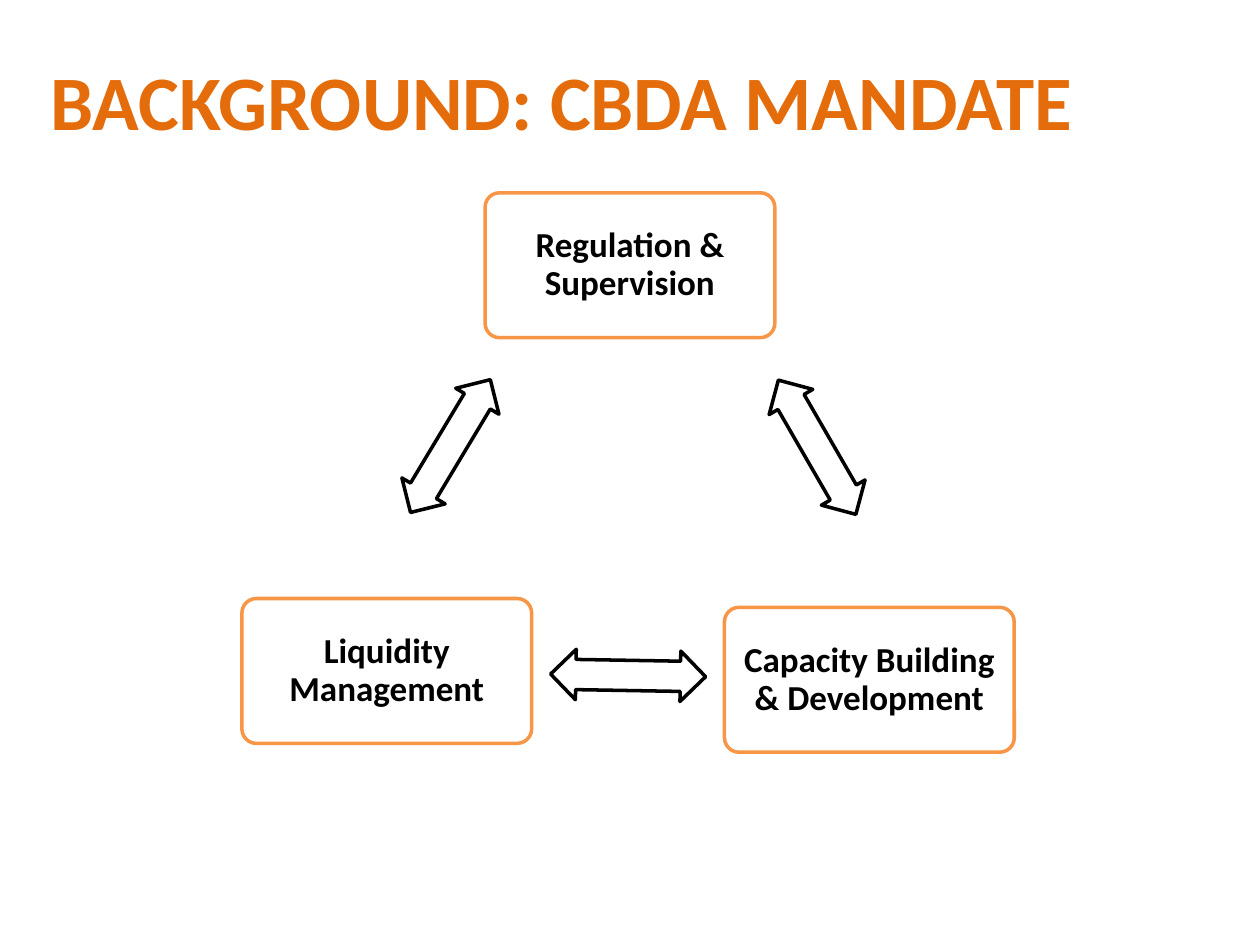
from dataclasses import dataclass

from pptx import Presentation
from pptx import util as u
from pptx.dml.color import RGBColor
from pptx.enum import shapes, text


@dataclass(frozen=True)
class Theme:
    font: str = "Calibri"
    title_size: int = 44
    label_size: int = 20
    line_width: int = 2
    title: str = "E46C0A"
    border: str = "F79646"
    ink: str = "000000"
    paper: str = "FFFFFF"


def write(frame, words, *, font, size, color, inset, spacing=1.0):
    """Fill a text frame with one bold, centred paragraph."""
    frame.word_wrap = True
    frame.vertical_anchor = text.MSO_ANCHOR.MIDDLE
    frame.margin_left = frame.margin_right = u.Inches(inset)
    frame.margin_top = frame.margin_bottom = u.Inches(inset)
    para = frame.paragraphs[0]
    para.alignment = text.PP_ALIGN.CENTER
    para.line_spacing = spacing
    span = para.add_run()
    span.text = words
    span.font.name = font
    span.font.size = u.Pt(size)
    span.font.bold = True
    span.font.color.rgb = RGBColor.from_string(color)


class SlideBuilder:
    def __init__(self, page, theme):
        self.page = page
        self.theme = theme

    def title(self, words, left, top, width, height):
        box = self.page.shapes.add_textbox(*map(u.Inches, (left, top, width, height)))
        write(box.text_frame, words, font=self.theme.font,
              size=self.theme.title_size, color=self.theme.title, inset=0.1)

    def outlined(self, kind, left, top, size, line, adjustments):
        shape = self.page.shapes.add_shape(kind, *map(u.Inches, (left, top, *size)))
        for index, value in enumerate(adjustments):
            shape.adjustments[index] = value
        shape.shadow.inherit = False
        shape.fill.solid()
        shape.fill.fore_color.rgb = RGBColor.from_string(self.theme.paper)
        shape.line.color.rgb = RGBColor.from_string(line)
        shape.line.width = u.Pt(self.theme.line_width)
        return shape

    def mandate(self, words, left, top):
        box = self.outlined(shapes.MSO_SHAPE.ROUNDED_RECTANGLE, left, top,
                            (2.3, 1.15), self.theme.border, [0.1])
        write(box.text_frame, words, font=self.theme.font, size=self.theme.label_size,
              color=self.theme.ink, inset=0.11, spacing=0.9)

    def link(self, left, top, angle):
        arrow = self.outlined(shapes.MSO_SHAPE.LEFT_RIGHT_ARROW, left, top,
                              (1.23, 0.4), self.theme.ink, [0.6, 0.5])
        arrow.rotation = angle


MANDATES = [
    ("Regulation & Supervision", 3.85, 1.53),
    ("Capacity Building & Development", 5.75, 4.82),
    ("Liquidity Management", 1.92, 4.75),
]
LINKS = [(5.87, 3.35, 60), (4.37, 5.16, 181), (2.96, 3.34, 301)]


def main():
    deck = Presentation()
    deck.slide_width, deck.slide_height = u.Inches(10), u.Inches(7.5)
    page = deck.slides.add_slide(deck.slide_layouts[6])
    builder = SlideBuilder(page, Theme())

    builder.title("BACKGROUND: CBDA MANDATE", 0, 0.25, 8.92, 1.08)
    for mandate in MANDATES:
        builder.mandate(*mandate)
    for link in LINKS:
        builder.link(*link)

    deck.save("out.pptx")


if __name__ == "__main__":
    main()
